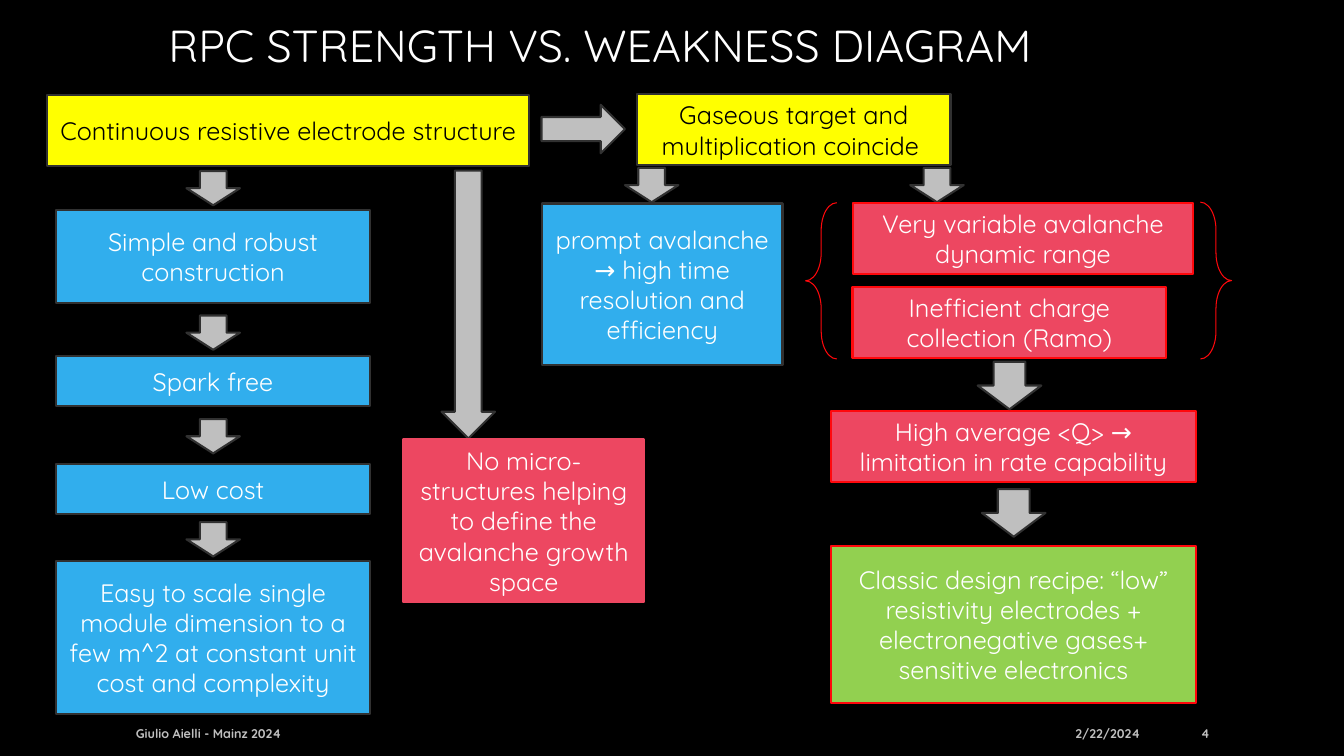
from lxml.etree import SubElement
from pptx import Presentation
from pptx.dml.color import RGBColor
from pptx.enum.shapes import MSO_SHAPE
from pptx.enum.text import MSO_ANCHOR, PP_ALIGN
from pptx.oxml.ns import qn
from pptx.util import Pt

COLOURS = {
    "background": "000000",
    "text": "FFFFFF",
    "dark text": "000000",
    "grey": "BFBFBF",
    "outline": "313131",
    "premise": "FFFF00",
    "strength": "31AEED",
    "weakness": "ED4761",
    "recipe": "92D050",
    "alert": "FF080C",
}


def colour(name):
    return RGBColor.from_string(COLOURS[name])


def write(shape, text, size=18, ink="text", bold=False, align=PP_ALIGN.CENTER):
    frame = shape.text_frame
    frame.word_wrap = True
    frame.vertical_anchor = MSO_ANCHOR.MIDDLE
    paragraph = frame.paragraphs[0]
    paragraph.alignment = align
    span = paragraph.add_run()
    span.text = text
    span.font.name = "Quicksand"
    span.font.size = Pt(size)
    span.font.bold = bold
    span.font.color.rgb = colour(ink)


class Diagram:
    def __init__(self, page):
        self.page = page
        page.background.fill.solid()
        page.background.fill.fore_color.rgb = colour("background")

    def title(self, text, left, top, width, height):
        title = self.page.shapes.title
        title.left, title.top = Pt(left), Pt(top)
        title.width, title.height = Pt(width), Pt(height)
        write(title, text, size=32, align=PP_ALIGN.LEFT)
        body = title.text_frame._txBody.bodyPr
        for fit in list(body):
            body.remove(fit)
        SubElement(body, qn("a:noAutofit"))

    def footer(self, text, left, width, align):
        box = self.page.shapes.add_textbox(Pt(left), Pt(509.8), Pt(width), Pt(28.8))
        write(box, text, size=9, ink="grey", bold=True, align=align)

    def shape(self, kind, left, top, width, height, fill=None, line="outline", weight=1.5):
        shape = self.page.shapes.add_shape(kind, Pt(left), Pt(top), Pt(width), Pt(height))
        shape.shadow.inherit = False
        if fill:
            shape.fill.solid()
            shape.fill.fore_color.rgb = colour(fill)
        else:
            shape.fill.background()
        shape.line.color.rgb = colour(line)
        shape.line.width = Pt(weight)
        return shape

    def box(self, text, left, top, width, height, fill, line="outline"):
        box = self.shape(MSO_SHAPE.RECTANGLE, left, top, width, height, fill, line)
        write(box, text, ink="dark text" if fill == "premise" else "text")

    def arrow(self, left, top, width=38.2, height=24.5, kind=MSO_SHAPE.DOWN_ARROW):
        self.shape(kind, left, top, width, height, "grey")

    def brace(self, left, top, height, rotation=0):
        brace = self.shape(MSO_SHAPE.LEFT_BRACE, left, top, 22.3, height,
                           line="alert", weight=0.75)
        brace.adjustments[0] = 0.89
        brace.rotation = rotation


def main():
    deck = Presentation()
    deck.slide_width, deck.slide_height = Pt(960), Pt(540)
    diagram = Diagram(deck.slides.add_slide(deck.slide_layouts[5]))

    diagram.title("RPC STRENGTH VS. WEAKNESS DIAGRAM", 113, -1.4, 780, 66.2)
    diagram.footer("2/22/2024", 695.5, 126, PP_ALIGN.RIGHT)
    diagram.footer("Giulio Aielli - Mainz 2024", 90, 594, PP_ALIGN.LEFT)
    diagram.footer("4", 828, 43.2, PP_ALIGN.RIGHT)

    # Premises
    diagram.box("Continuous resistive electrode structure", 33.8, 67.9, 344.2, 51, "premise")
    diagram.arrow(386.8, 74.9, 59.6, 34.6, MSO_SHAPE.RIGHT_ARROW)
    diagram.box("Gaseous target and multiplication coincide ", 455, 67.2, 224, 51, "premise")

    # Strengths of the electrode structure, each reached by an arrow
    strengths = [
        ("Simple and robust construction", 122.2, 150.2, 66.2),
        ("Spark free", 225.4, 254.2, 36),
        ("Low cost", 299.4, 331.4, 36),
        ("Easy to scale single module dimension to a few m^2 at constant unit cost and complexity",
         373, 400.5, 109.4),
    ]
    for text, arrow_top, box_top, height in strengths:
        diagram.arrow(133.2, arrow_top)
        diagram.box(text, 40.2, box_top, 224, height, "strength")

    diagram.arrow(315.4, 121.9, height=191.3)
    diagram.box("No micro-structures helping to define the avalanche growth space",
                288, 314, 172.2, 116, "weakness", "weakness")

    # Consequences of the gaseous target
    for left in (446.4, 650.2):
        diagram.arrow(left, 120)
    diagram.box("prompt avalanche → high time resolution and efficiency",
                387, 145.4, 172, 115.6, "strength")

    alerts = [
        ("Very variable avalanche dynamic range", 609, 144.8, 243.4, 51, "weakness"),
        ("Inefficient charge collection (Ramo)", 609, 205, 224, 51, "weakness"),
        ("High average <Q> → limitation in rate capability", 593.6, 293.6, 260.6, 51, "weakness"),
        ("Classic design recipe: “low” resistivity electrodes + electronegative gases+ "
         "sensitive electronics", 593.6, 389.9, 260.6, 112, "recipe"),
    ]
    for alert in alerts:
        diagram.box(*alert, line="alert")
    diagram.brace(575.4, 144.8, 111.6)
    diagram.brace(857.4, 144.4, 112, rotation=180)
    for left, top in ((698.4, 258.4), (701.4, 349.4)):
        diagram.arrow(left, top, 45.4, 34)

    deck.save("out.pptx")


if __name__ == "__main__":
    main()
